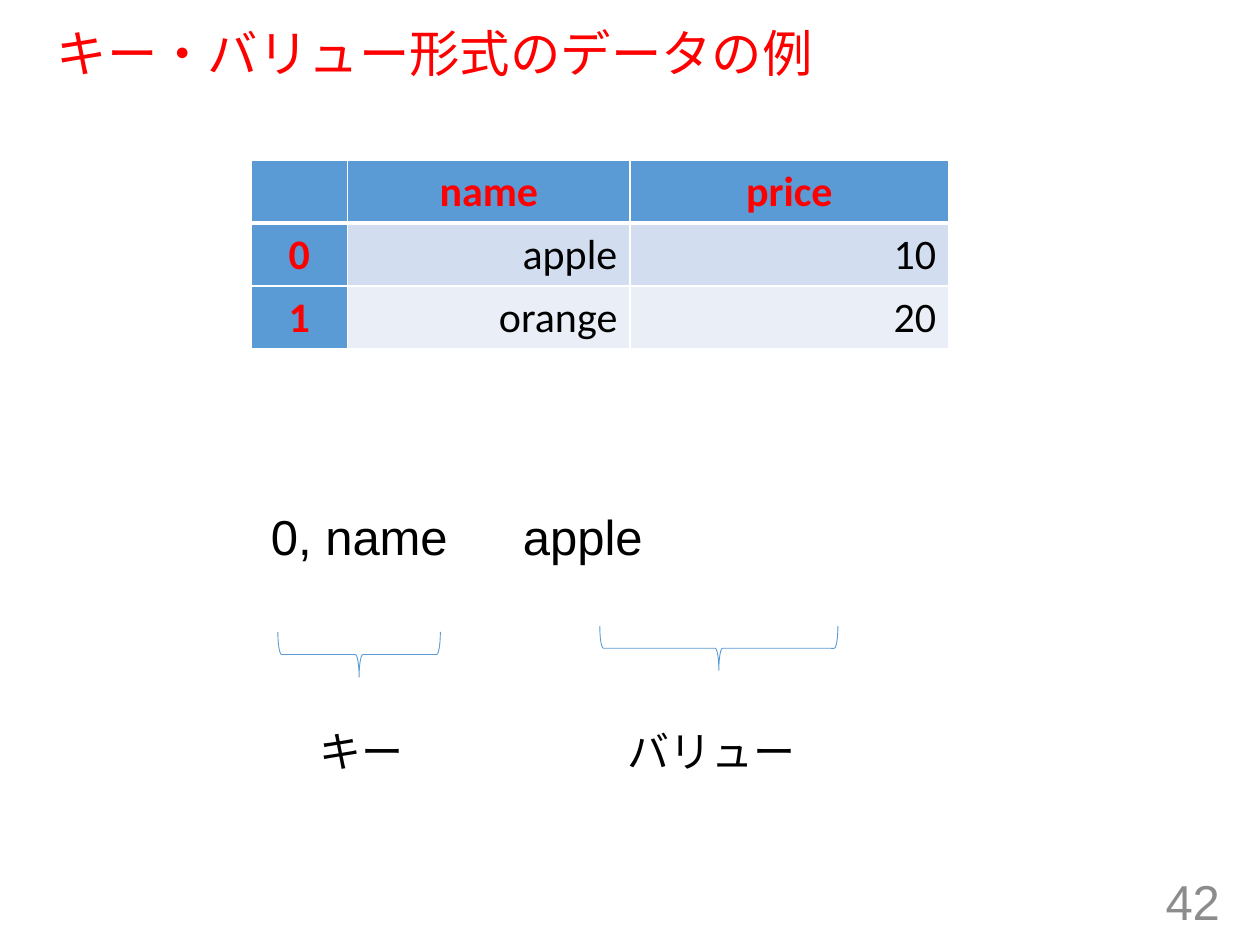
from dataclasses import dataclass

from lxml import etree
from pptx import Presentation
from pptx.dml.color import RGBColor
from pptx.enum import shapes, text
from pptx.oxml import ns
from pptx.util import Inches, Pt

RED, BLACK, GRAY, WHITE, BLUE = "FF0000", "000000", "8C8C8C", "FFFFFF", "5B9BD5"
BANDS = ("D2DEEF", "EAEFF7")
ROWS = (("", "name", "price"), ("0", "apple", "10"), ("1", "orange", "20"))
COLUMN_WIDTHS = (0.77, 2.24, 2.53)
ALIGN = text.PP_ALIGN


@dataclass
class Box:
    left: float
    top: float
    width: float
    height: float

    def lengths(self) -> list:
        return [Inches(v) for v in (self.left, self.top, self.width, self.height)]


@dataclass
class BracedLabel:
    label: str
    text_box: Box
    brace: Box


BRACED_LABELS = (
    BracedLabel("キー", Box(2.44, 5.71, 0.88, 0.5), Box(2.67, 4.55, 0.36, 1.29)),
    BracedLabel("バリュー", Box(4.88, 5.71, 1.55, 0.5), Box(5.53, 4.2, 0.35, 1.89)),
)


def rgb(color: str) -> RGBColor:
    return RGBColor.from_string(color)


def write(tf, content: str, size: float, font: str, color: str,
          align=ALIGN.LEFT, bold: bool = False):
    p = tf.paragraphs[0]
    p.text = content
    p.alignment = align
    p.font.size, p.font.name, p.font.bold = Pt(size), font, bold
    p.font.color.rgb = rgb(color)
    return p


def place(sp, box: Box) -> None:
    sp.left, sp.top, sp.width, sp.height = box.lengths()


def add_child(parent, tag: str, **attributes):
    return etree.SubElement(parent, ns.qn(tag), **attributes)


def add_borders(cell, bottom_width: float) -> None:
    tc_pr = cell._tc.get_or_add_tcPr()
    for side, width in (("L", 1), ("R", 1), ("T", 1), ("B", bottom_width)):
        ln = add_child(tc_pr, f"a:ln{side}", w=str(Pt(width)))
        add_child(add_child(ln, "a:solidFill"), "a:srgbClr", val=WHITE)


def add_price_table(s) -> None:
    frame = s.shapes.add_table(len(ROWS), len(COLUMN_WIDTHS),
                               *Box(1.99, 1.27, 5.54, 1.5).lengths())
    table = frame.table
    for column, width in zip(table.columns, COLUMN_WIDTHS):
        column.width = Inches(width)
    for i, row in enumerate(ROWS):
        for j, value in enumerate(row):
            cell = table.cell(i, j)
            header = i == 0 or j == 0
            add_borders(cell, 3 if i == 0 else 1)
            cell.fill.solid()
            cell.fill.fore_color.rgb = rgb(BLUE if header else BANDS[i - 1])
            write(cell.text_frame, value, 24, "Calibri", RED if header else BLACK,
                  ALIGN.CENTER if header else ALIGN.RIGHT, header)


def add_pair(sp) -> None:
    """Fill the body with the key and its value, set apart by tab stops."""
    place(sp, Box(2.05, 3.97, 6.68, 0.72))
    sp.text_frame.auto_size = text.MSO_AUTO_SIZE.NONE
    p = write(sp.text_frame, "0, name\t\tapple", 28, "Arial", BLACK)
    p.space_before = Pt(10)
    p_pr = p._p.get_or_add_pPr()
    p_pr.set("marL", "0")
    p_pr.set("indent", "0")
    no_bullet = etree.Element(ns.qn("a:buNone"))
    tabs = etree.Element(ns.qn("a:tabLst"))
    for stop in (2, 3):
        add_child(tabs, "a:tab", pos=str(Inches(stop)), algn="l")
    p_pr.find(ns.qn("a:spcBef")).addnext(no_bullet)
    no_bullet.addnext(tabs)


def add_braced_label(s, item: BracedLabel) -> None:
    brace = s.shapes.add_shape(shapes.MSO_SHAPE.RIGHT_BRACE, *item.brace.lengths())
    brace.rotation = 90
    brace.shadow.inherit = False
    brace.fill.background()
    brace.line.color.rgb = rgb(BLUE)
    brace.line.width = Pt(0.5)
    tf = s.shapes.add_textbox(*item.text_box.lengths()).text_frame
    tf.word_wrap = False
    tf.auto_size = text.MSO_AUTO_SIZE.SHAPE_TO_FIT_TEXT
    write(tf, item.label, 24, "Calibri", BLACK)


def main() -> None:
    prs = Presentation()
    prs.slide_width, prs.slide_height = Inches(10), Inches(7.5)
    s = prs.slides.add_slide(prs.slide_layouts[1])

    title = s.shapes.title
    place(title, Box(0.35, 0.19, 9.25, 0.51))
    title.text_frame.auto_size = text.MSO_AUTO_SIZE.NONE
    title.text_frame.vertical_anchor = text.MSO_ANCHOR.MIDDLE
    p = write(title.text_frame, "キー・バリュー形式のデータの例", 28.8, "Arial", RED)
    p.line_spacing = 0.9

    number = s.shapes.add_textbox(*Box(7.53, 6.95, 2.25, 0.4).lengths()).text_frame
    number.word_wrap = True
    number.vertical_anchor = text.MSO_ANCHOR.MIDDLE
    write(number, "42", 28, "Arial", GRAY, ALIGN.RIGHT)

    add_price_table(s)
    add_pair(s.placeholders[1])
    for item in BRACED_LABELS:
        add_braced_label(s, item)
    prs.save("out.pptx")


if __name__ == "__main__":
    main()
